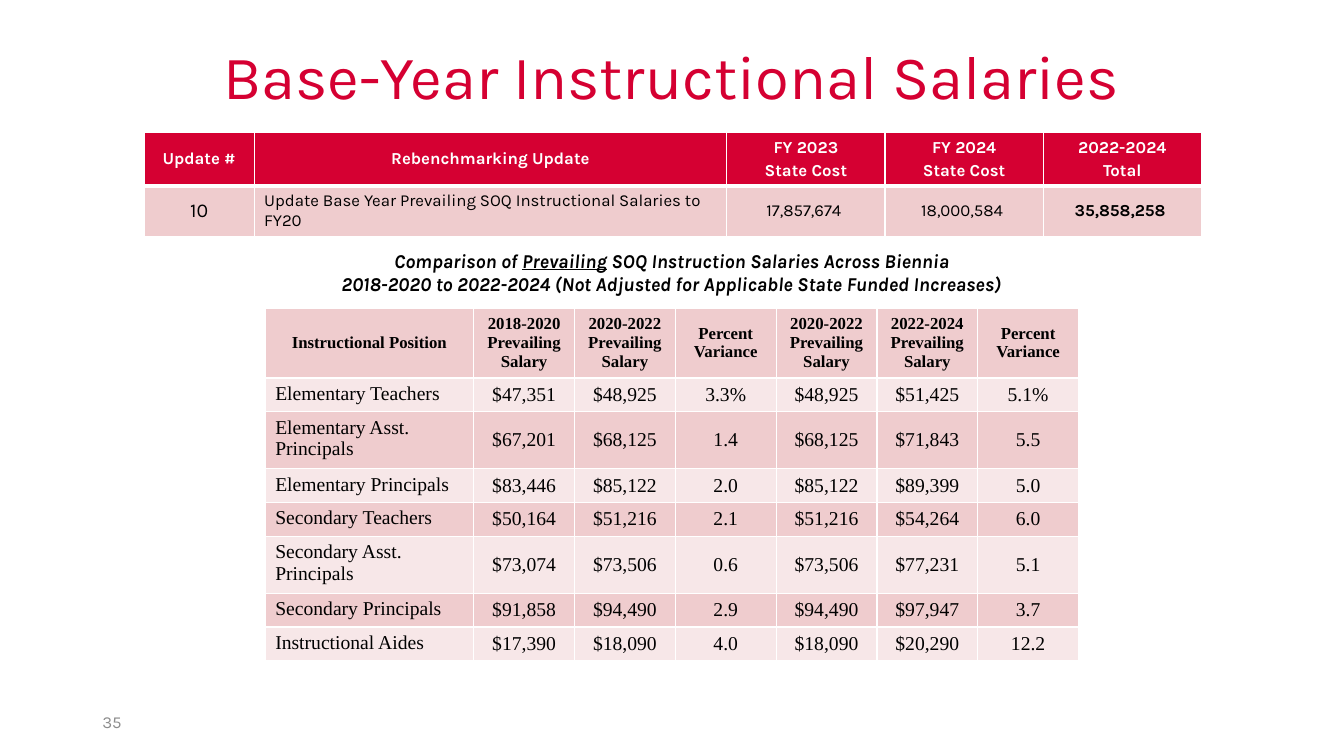
from dataclasses import dataclass

from lxml import etree
from pptx import Presentation
from pptx.dml.color import RGBColor
from pptx.enum.text import MSO_ANCHOR, PP_ALIGN
from pptx.oxml.ns import qn
from pptx.util import Pt

LEFT, CENTER = PP_ALIGN.LEFT, PP_ALIGN.CENTER
TOP, MIDDLE = MSO_ANCHOR.TOP, MSO_ANCHOR.MIDDLE


@dataclass(frozen=True)
class Theme:
    sans: str = "Karla"
    serif: str = "Times New Roman"
    red: str = "D50032"
    rose: str = "EFCCCE"
    blush: str = "F7E7E8"
    white: str = "FFFFFF"
    black: str = "000000"
    gray: str = "8C8C8C"
    title: int = 44
    body: int = 14
    small: int = 12
    thin: int = 1
    thick: int = 3


THEME = Theme()

UPDATE_HEADERS = [
    "Update #", "Rebenchmarking Update", "FY 2023\nState Cost",
    "FY 2024\nState Cost", "2022-2024\nTotal",
]
UPDATE_VALUES = [
    "10", "Update Base Year Prevailing SOQ Instructional Salaries to FY20",
    "17,857,674 ", "18,000,584 ", "35,858,258 ",
]
COMPARISON_TITLE = (
    "Comparison of Prevailing SOQ Instruction Salaries Across Biennia\n"
    "2018-2020 to 2022-2024 (Not Adjusted for Applicable State Funded Increases)"
)
SALARY_HEADERS = [
    "Instructional Position",
    "2018-2020\nPrevailing\nSalary", "2020-2022\nPrevailing\nSalary", "Percent\nVariance",
    "2020-2022\nPrevailing\nSalary", "2022-2024 Prevailing\nSalary", "Percent\nVariance",
]
SALARIES = [
    ("Elementary Teachers", "$47,351", "$48,925", "3.3%", "$48,925", "$51,425", "5.1%"),
    ("Elementary Asst. Principals", "$67,201", "$68,125", "1.4", "$68,125", "$71,843", "5.5"),
    ("Elementary Principals", "$83,446", "$85,122", "2.0", "$85,122", "$89,399", "5.0"),
    ("Secondary Teachers", "$50,164", "$51,216", "2.1", "$51,216", "$54,264", "6.0"),
    ("Secondary Asst. Principals", "$73,074", "$73,506", "0.6", "$73,506", "$77,231", "5.1"),
    ("Secondary Principals", "$91,858", "$94,490", "2.9", "$94,490", "$97,947", "3.7"),
    ("Instructional Aides", "$17,390", "$18,090", "4.0", "$18,090", "$20,290", "12.2"),
]


def write_text(frame, text, *, size=THEME.body, font=THEME.sans, color=THEME.black,
               bold=False, italic=False, underlined=None, align=CENTER,
               line_spacing=None, space_before=0):
    frame.word_wrap = True
    for index, line in enumerate(text.split("\n")):
        paragraph = frame.paragraphs[0] if index == 0 else frame.add_paragraph()
        paragraph.alignment = align
        if line_spacing:
            paragraph.line_spacing = line_spacing
        if index and space_before:
            paragraph.space_before = Pt(space_before)
        parts = line.partition(underlined) if underlined else (line,)
        for part in filter(None, parts):
            run = paragraph.add_run()
            run.text = part
            run.font.name = font
            run.font.size = Pt(size)
            run.font.bold = bold
            run.font.italic = italic
            run.font.underline = part == underlined
            run.font.color.rgb = RGBColor.from_string(color)


def add_text(slide, text, left, top, width, height, **text_format):
    frame = slide.shapes.add_textbox(Pt(left), Pt(top), Pt(width), Pt(height)).text_frame
    frame.vertical_anchor = MIDDLE
    write_text(frame, text, **text_format)


def add_border(cell, side, width):
    properties = cell._tc.get_or_add_tcPr()
    line = etree.SubElement(properties, qn(f"a:ln{side}"), w=str(Pt(width)))
    fill = etree.SubElement(line, qn("a:solidFill"))
    etree.SubElement(fill, qn("a:srgbClr"), val=THEME.white)


def add_table(slide, left, top, widths, heights):
    table = slide.shapes.add_table(
        len(heights), len(widths), Pt(left), Pt(top), Pt(sum(widths)), Pt(sum(heights))
    ).table
    table.first_row = table.horz_banding = False
    for column, width in zip(table.columns, widths):
        column.width = Pt(width)
    for index, (row, height) in enumerate(zip(table.rows, heights)):
        row.height = Pt(height)
        for cell in row.cells:
            add_border(cell, "L", THEME.thin)
            add_border(cell, "R", THEME.thin)
            add_border(cell, "T", THEME.thick if index == 1 else THEME.thin)
            add_border(cell, "B", THEME.thick if index == 0 else THEME.thin)
            cell.fill.background()
    return table


def fill_cell(cell, text, fill, *, anchor=MIDDLE, inset_x=7.2, inset_y=3.6, **text_format):
    cell.fill.solid()
    cell.fill.fore_color.rgb = RGBColor.from_string(fill)
    cell.vertical_anchor = anchor
    cell.margin_left = cell.margin_right = Pt(inset_x)
    cell.margin_top = cell.margin_bottom = Pt(inset_y)
    write_text(cell.text_frame, text, **text_format)


def add_update_table(slide):
    table = add_table(slide, 103, 94.3, [78.5, 337.7] + [113] * 3, [37.4, 36])
    last = len(UPDATE_VALUES) - 1
    for column, (header, value) in enumerate(zip(UPDATE_HEADERS, UPDATE_VALUES)):
        fill_cell(table.cell(0, column), header, THEME.red, size=THEME.small,
                  color=THEME.white, bold=True, space_before=2.4)
        fill_cell(table.cell(1, column), value, THEME.rose,
                  inset_x=7.2 if column else 0.7, inset_y=0,
                  size=THEME.small if column else THEME.body,
                  bold=column == last, align=LEFT if column == 1 else CENTER)


def add_salary_table(slide):
    heights = [49, 49.7] + [40.3 if "Asst." in row[0] else 23.76 for row in SALARIES]
    table = add_table(slide, 189.4, 170.6, [149] + [72] * 6, heights)
    heading = table.cell(0, 0)
    heading.merge(table.cell(0, len(SALARY_HEADERS) - 1))
    heading.vertical_anchor = MIDDLE
    write_text(heading.text_frame, COMPARISON_TITLE, bold=True, italic=True,
               underlined="Prevailing")
    for column, header in enumerate(SALARY_HEADERS):
        fill_cell(table.cell(1, column), header, THEME.rose, size=THEME.small,
                  font=THEME.serif, bold=True)
    for index, values in enumerate(SALARIES):
        fill = THEME.rose if index % 2 else THEME.blush
        for column, value in enumerate(values):
            fill_cell(table.cell(index + 2, column), value, fill, font=THEME.serif,
                      anchor=MIDDLE if column else TOP, align=CENTER if column else LEFT)


def main():
    presentation = Presentation()
    presentation.slide_width, presentation.slide_height = Pt(960), Pt(540)
    slide = presentation.slides.add_slide(presentation.slide_layouts[6])
    add_text(slide, "Base-Year Instructional Salaries", 66, 28.8, 828, 55.4,
             size=THEME.title, color=THEME.red, line_spacing=0.9)
    add_update_table(slide)
    add_text(slide, "35", 66, 501, 216, 28.8, size=THEME.small, color=THEME.gray, align=LEFT)
    add_salary_table(slide)
    presentation.save("out.pptx")


if __name__ == "__main__":
    main()
